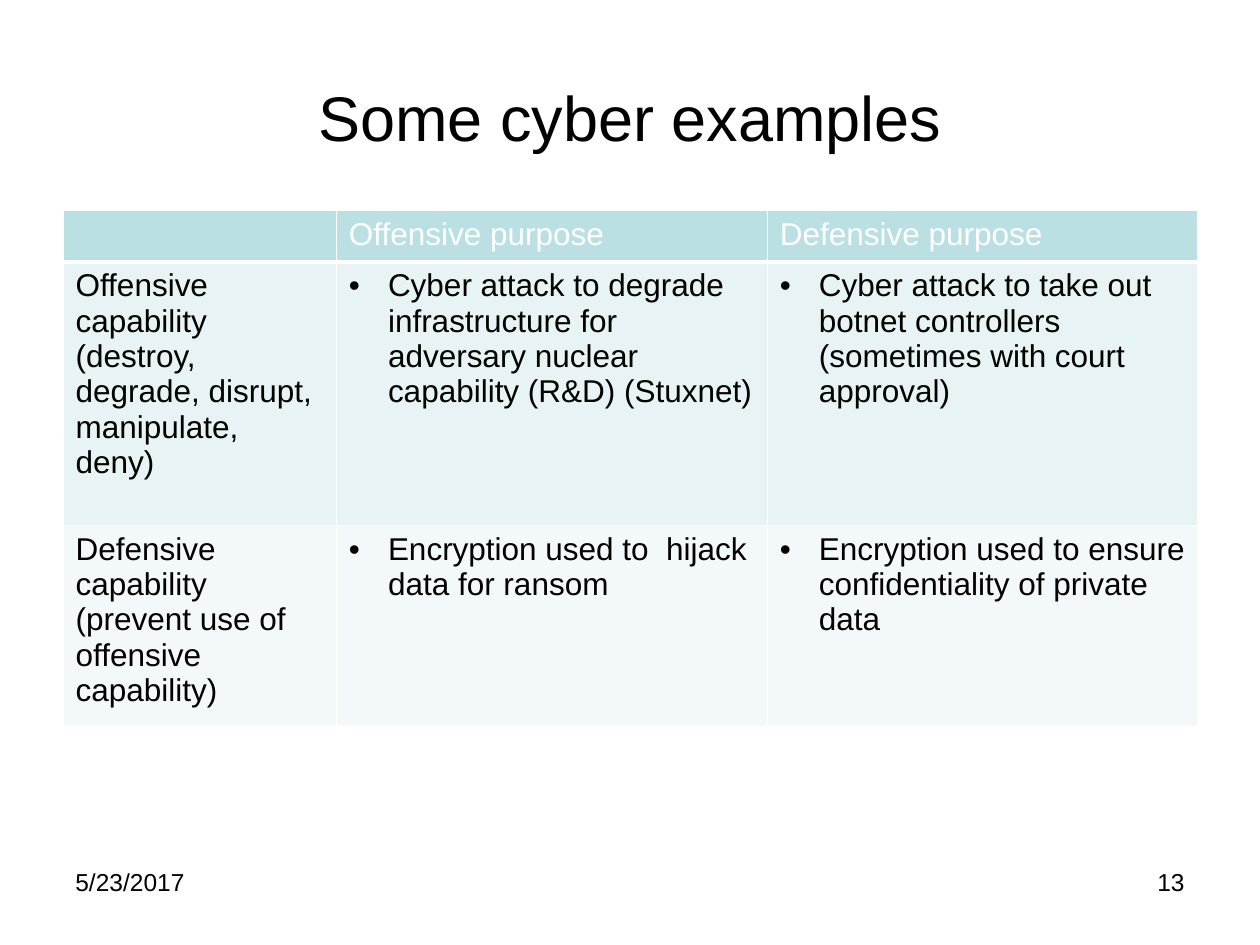
from dataclasses import dataclass

from lxml.etree import SubElement
from pptx import Presentation
from pptx.dml.color import RGBColor
from pptx.enum.text import MSO_ANCHOR, PP_ALIGN
from pptx.oxml.ns import qn
from pptx.util import Inches, Pt

BLACK = RGBColor(0x00, 0x00, 0x00)
WHITE = RGBColor(0xFF, 0xFF, 0xFF)
TEAL = RGBColor(0xBB, 0xE0, 0xE3)
PALE = RGBColor(0xE7, 0xF3, 0xF4)
MIST = RGBColor(0xF3, 0xF9, 0xFA)
FONT = "Arial"
INDENT = Inches(0.31)
EDGE = 0.5
COLS = (2.17, 3.42, 3.42)


@dataclass
class Row:
    height: float
    fill: RGBColor
    ink: RGBColor
    label: tuple[str, ...]
    points: tuple[str, str]
    bullet: bool = True
    base: float = 1  # bottom border width in points


@dataclass
class Note:
    text: str
    left: float
    align: PP_ALIGN


ROWS = (
    Row(0.41, TEAL, WHITE, (), ("Offensive purpose", "Defensive purpose"),
        bullet=False, base=3),
    Row(2.09, PALE, BLACK,
        ("Offensive capability",
         "(destroy, degrade, disrupt, manipulate, deny)"),
        ("Cyber attack to degrade infrastructure for adversary nuclear "
         "capability (R&D) (Stuxnet)",
         "Cyber attack to take out botnet controllers (sometimes with court "
         "approval)")),
    Row(1.6, MIST, BLACK,
        ("Defensive capability", "(prevent use of offensive capability)"),
        ("Encryption used to  hijack data for ransom",
         "Encryption used to ensure confidentiality of private data")),
)
NOTES = (
    Note("5/23/2017", EDGE, PP_ALIGN.LEFT),
    Note("13", 7.17, PP_ALIGN.RIGHT),
)


def add_run(para, text: str, size: float, ink: RGBColor) -> None:
    run = para.add_run()
    run.text = text
    run.font.name = FONT
    run.font.size = Pt(size)
    run.font.bold = False
    run.font.color.rgb = ink


def add_bullet(para) -> None:
    props = para._p.get_or_add_pPr()
    props.set("marL", str(INDENT))
    props.set("indent", str(-INDENT))
    SubElement(props, qn("a:buFont"), typeface=FONT)
    SubElement(props, qn("a:buChar"), char="•")


def add_edges(cell, base: float) -> None:
    # Borders come before the fill in the cell properties
    props = cell._tc.get_or_add_tcPr()
    widths = {"a:lnL": 1, "a:lnR": 1, "a:lnT": 1, "a:lnB": base}
    for tag, width in widths.items():
        line = SubElement(props, qn(tag), w=str(Pt(width)))
        fill = SubElement(line, qn("a:solidFill"))
        SubElement(fill, qn("a:srgbClr"), val=str(WHITE))


def fill_cell(cell, row: Row, lines: tuple[str, ...], bullet: bool) -> None:
    add_edges(cell, row.base)
    cell.fill.solid()
    cell.fill.fore_color.rgb = row.fill
    frame = cell.text_frame
    for num, text in enumerate(lines):
        para = frame.add_paragraph() if num else frame.paragraphs[0]
        if bullet:
            add_bullet(para)
        add_run(para, text, 18, row.ink)


def add_grid(slide) -> None:
    frame = slide.shapes.add_table(
        len(ROWS), len(COLS), Inches(EDGE), Inches(1.67),
        Inches(sum(COLS)), Inches(sum(row.height for row in ROWS)))
    table = frame.table
    for col, width in zip(table.columns, COLS):
        col.width = Inches(width)
    for num, row in enumerate(ROWS):
        table.rows[num].height = Inches(row.height)
        fill_cell(table.cell(num, 0), row, row.label, False)
        for col, text in enumerate(row.points, 1):
            fill_cell(table.cell(num, col), row, (text,), row.bullet)


def add_note(slide, note: Note) -> None:
    box = slide.shapes.add_textbox(
        Inches(note.left), Inches(6.83), Inches(2.33), Inches(0.52))
    box.text_frame.word_wrap = True
    para = box.text_frame.paragraphs[0]
    para.alignment = note.align
    add_run(para, note.text, 14, BLACK)


def main() -> None:
    deck = Presentation()
    deck.slide_width, deck.slide_height = Inches(10), Inches(7.5)
    slide = deck.slides.add_slide(deck.slide_layouts[5])

    # Title
    title = slide.shapes.title
    title.left, title.top = Inches(EDGE), Inches(0.3)
    title.width, title.height = Inches(9), Inches(1.25)
    title.text_frame.vertical_anchor = MSO_ANCHOR.MIDDLE
    para = title.text_frame.paragraphs[0]
    para.alignment = PP_ALIGN.CENTER
    add_run(para, "Some cyber examples", 36, BLACK)

    # Table of capabilities by purpose
    add_grid(slide)

    # Date and page number
    for note in NOTES:
        add_note(slide, note)

    deck.save("out.pptx")


if __name__ == "__main__":
    main()
